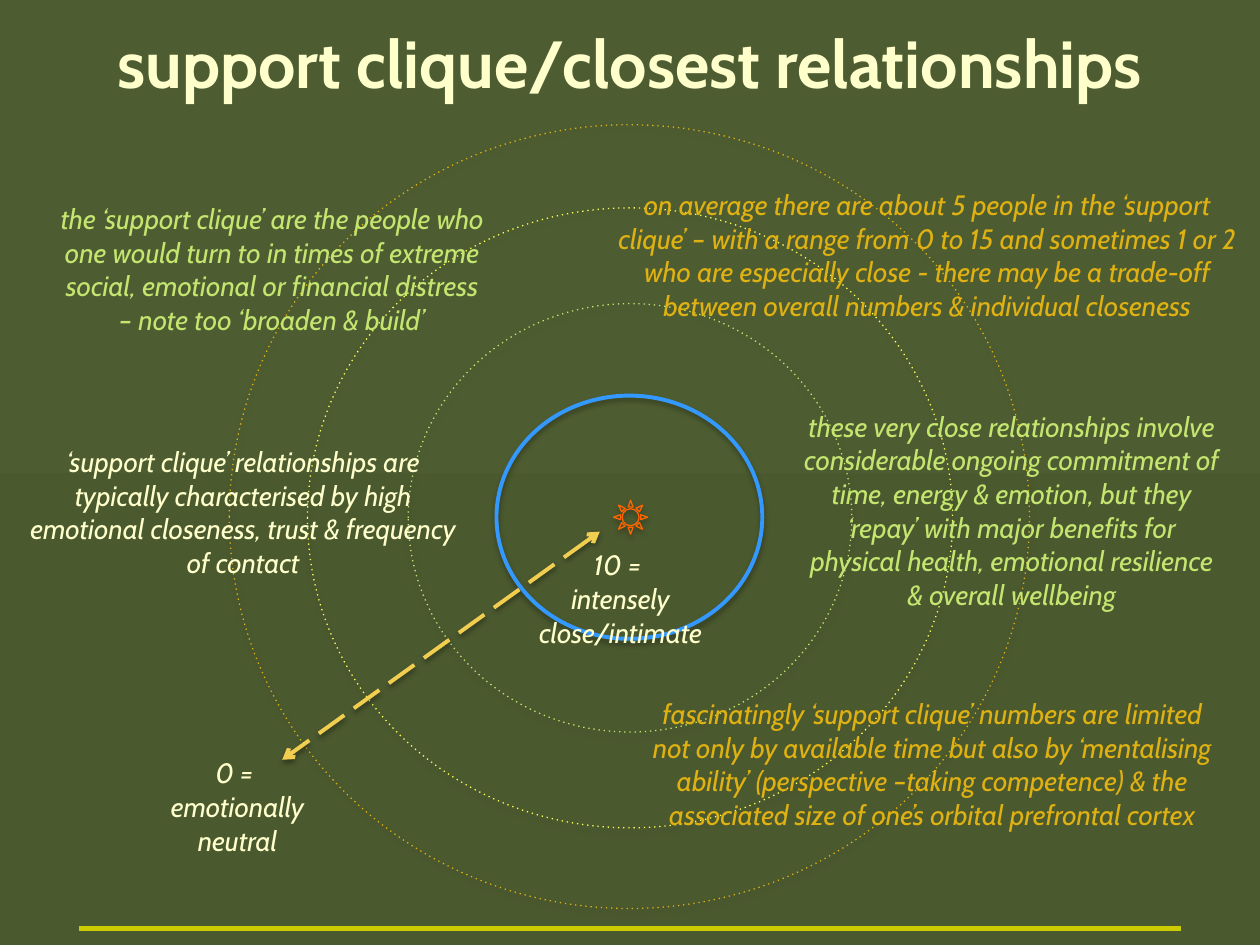
from lxml import etree
from pptx import Presentation
from pptx import util as u
from pptx.dml.color import RGBColor
from pptx.enum import dml, shapes, text
from pptx.oxml.ns import qn

CREAM = RGBColor(0xFF, 0xFF, 0xCC)
GOLD = RGBColor(0xDF, 0xB1, 0x12)
LIME = RGBColor(0xC4, 0xE6, 0x70)
YELLOW = RGBColor(0xFF, 0xFF, 0x59)
BLUE = RGBColor(0x33, 0x99, 0xFF)
ORANGE = RGBColor(0xFF, 0x66, 0x00)
SAND = RGBColor(0xF1, 0xCD, 0x50)
OLIVE = RGBColor(0xCC, 0xCC, 0x00)
GREEN_TOP = RGBColor(0x4E, 0x5D, 0x31)
GREEN_BOTTOM = RGBColor(0x4B, 0x59, 0x2F)


def add_shadow(effects, distance, opacity):
    shadow = etree.SubElement(effects, qn("a:outerShdw"), blurRad="40000",
                              dist=str(distance), dir="5400000", rotWithShape="0")
    black = etree.SubElement(shadow, qn("a:srgbClr"), val="000000")
    etree.SubElement(black, qn("a:alpha"), val=str(opacity))


def style_text(frame, size, color, bold, italic):
    frame.word_wrap = True
    for paragraph in frame.paragraphs:
        paragraph.alignment = text.PP_ALIGN.CENTER
        for run in paragraph.runs:
            run.font.name = "Cabin"
            run.font.size = u.Pt(size)
            run.font.bold = bold
            run.font.italic = italic
            run.font.color.rgb = color


prs = Presentation()
prs.slide_width, prs.slide_height = u.Inches(10), u.Inches(7.5)
slide = prs.slides.add_slide(prs.slide_layouts[5])

backdrop = slide.background.fill
backdrop.gradient()
backdrop.gradient_angle = 270
for stop, color in zip(backdrop.gradient_stops, (GREEN_TOP, GREEN_BOTTOM)):
    stop.color.rgb = color

heading = slide.shapes.title
heading.left, heading.top = u.Inches(0), u.Inches(0.21)
heading.width, heading.height = u.Inches(10), u.Inches(0.65)
heading.text_frame.text = "support clique/closest relationships"
heading.text_frame.vertical_anchor = text.MSO_ANCHOR.BOTTOM
heading.text_frame.auto_size = text.MSO_AUTO_SIZE.NONE
style_text(heading.text_frame, 38, CREAM, True, False)

OVAL, SUN = shapes.MSO_SHAPE.OVAL, shapes.MSO_SHAPE.SUN
circles = [
    (OVAL, 1.82, 0.99, 6.35, 6.22, GOLD, 0.75, True),
    (OVAL, 3.94, 3.14, 2.11, 1.93, BLUE, 2.25, False),
    (SUN, 4.87, 3.97, 0.27, 0.27, ORANGE, 0.75, False),
    (OVAL, 3.24, 2.41, 3.52, 3.4, LIME, 0.75, True),
    (OVAL, 2.44, 1.65, 5.12, 4.92, YELLOW, 0.75, True),
]
network = slide.shapes.add_group_shape()
for kind, left, top, width, height, color, weight, dotted in circles:
    circle = network.shapes.add_shape(kind, u.Inches(left), u.Inches(top),
                                      u.Inches(width), u.Inches(height))
    circle.fill.background()
    circle.line.color.rgb = color
    circle.line.width = u.Pt(weight)
    if dotted:
        circle.line.dash_style = dml.MSO_LINE.ROUND_DOT
        circle.element.spPr.find(".//" + qn("a:prstDash")).set("val", "dot")
    circle.shadow.inherit = False
    add_shadow(circle.element.spPr.find(qn("a:effectLst")), 23000, 35000)

lines = [
    (0.63, 7.37, 9.37, 7.37, OLIVE, 3.25, False),
    (4.76, 4.22, 2.24, 6.03, SAND, 2.25, True),
]
for x1, y1, x2, y2, color, weight, is_scale in lines:
    line = slide.shapes.add_connector(shapes.MSO_CONNECTOR.STRAIGHT, u.Inches(x1),
                                      u.Inches(y1), u.Inches(x2), u.Inches(y2))
    line.line.color.rgb = color
    line.line.width = u.Pt(weight)
    properties = line.element.spPr
    if is_scale:
        line.line.dash_style = dml.MSO_LINE.LONG_DASH
        for end in ("a:headEnd", "a:tailEnd"):
            etree.SubElement(properties.find(qn("a:ln")), qn(end), type="arrow")
    effects = etree.SubElement(properties, qn("a:effectLst"))
    if is_scale:
        add_shadow(effects, 20000, 38000)

notes = [
    (1.06, 5.95, 1.65, 0.91, CREAM, "0 = \nemotionally neutral"),
    (3.9, 4.3, 2.05, 0.91, CREAM, "10 = \nintensely close/intimate"),
    (4.76, 1.44, 5.2, 1.45, GOLD,
     "on average there are about 5 people in the ‘support clique’ – with a range from "
     "0 to 15 and sometimes 1 or 2 who are especially close - there may be a trade-off "
     "between overall numbers & individual closeness"),
    (6.26, 3.2, 3.54, 1.99, LIME,
     "these very close relationships involve considerable ongoing commitment of time, "
     "energy & emotion, but they ‘repay’ with major benefits for physical health, "
     "emotional resilience & overall wellbeing"),
    (0.12, 3.48, 3.62, 1.18, CREAM,
     "‘support clique’ relationships are typically characterised by high emotional "
     "closeness, trust & frequency of contact"),
    (5, 5.48, 4.8, 1.45, GOLD,
     "fascinatingly ‘support clique’ numbers are limited not only by available time but "
     "also by ‘mentalising ability’ (perspective –taking competence) & the associated "
     "size of one’s orbital prefrontal cortex"),
    (0.35, 1.55, 3.62, 1.45, LIME,
     "the ‘support clique’ are the people who one would turn to in times of extreme "
     "social, emotional or financial distress – note too ‘broaden & build’"),
]
for left, top, width, height, color, words in notes:
    note = slide.shapes.add_textbox(u.Inches(left), u.Inches(top),
                                    u.Inches(width), u.Inches(height))
    note.text_frame.text = words
    note.text_frame.auto_size = text.MSO_AUTO_SIZE.SHAPE_TO_FIT_TEXT
    style_text(note.text_frame, 16, color, False, True)

prs.save("out.pptx")
